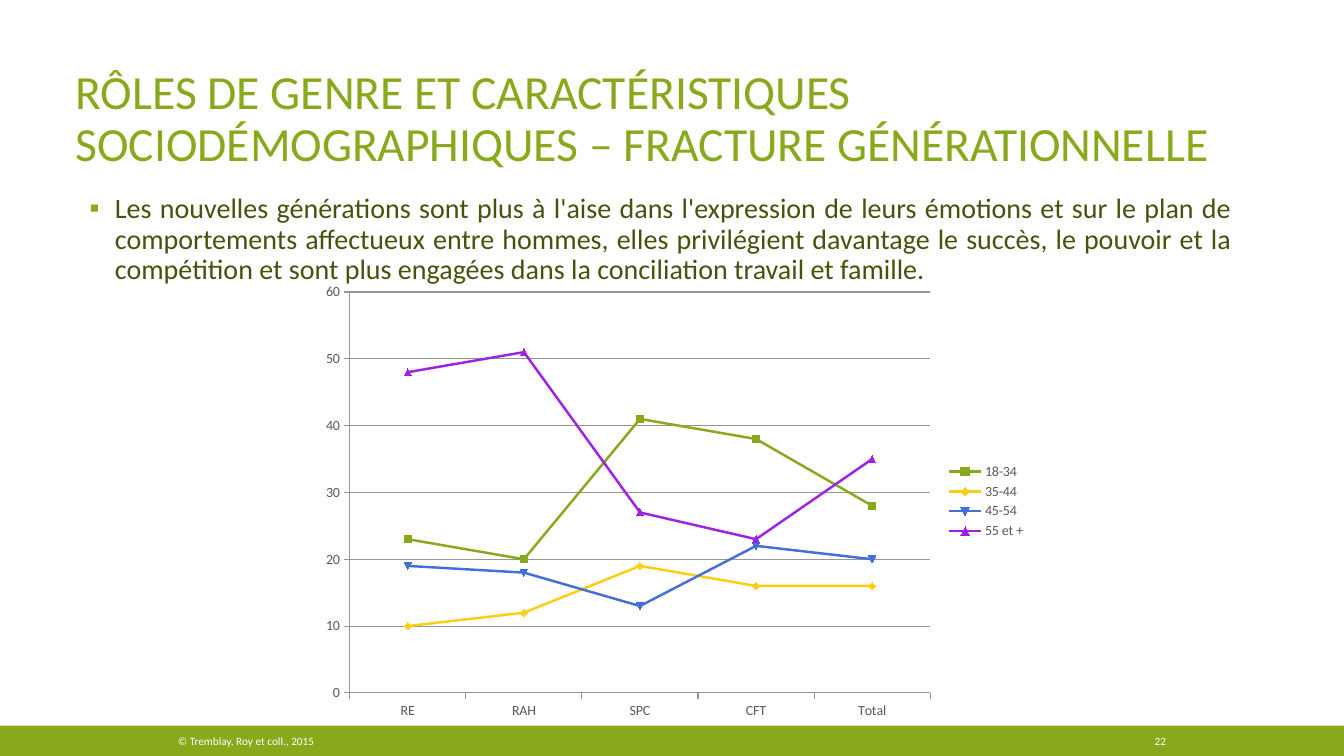
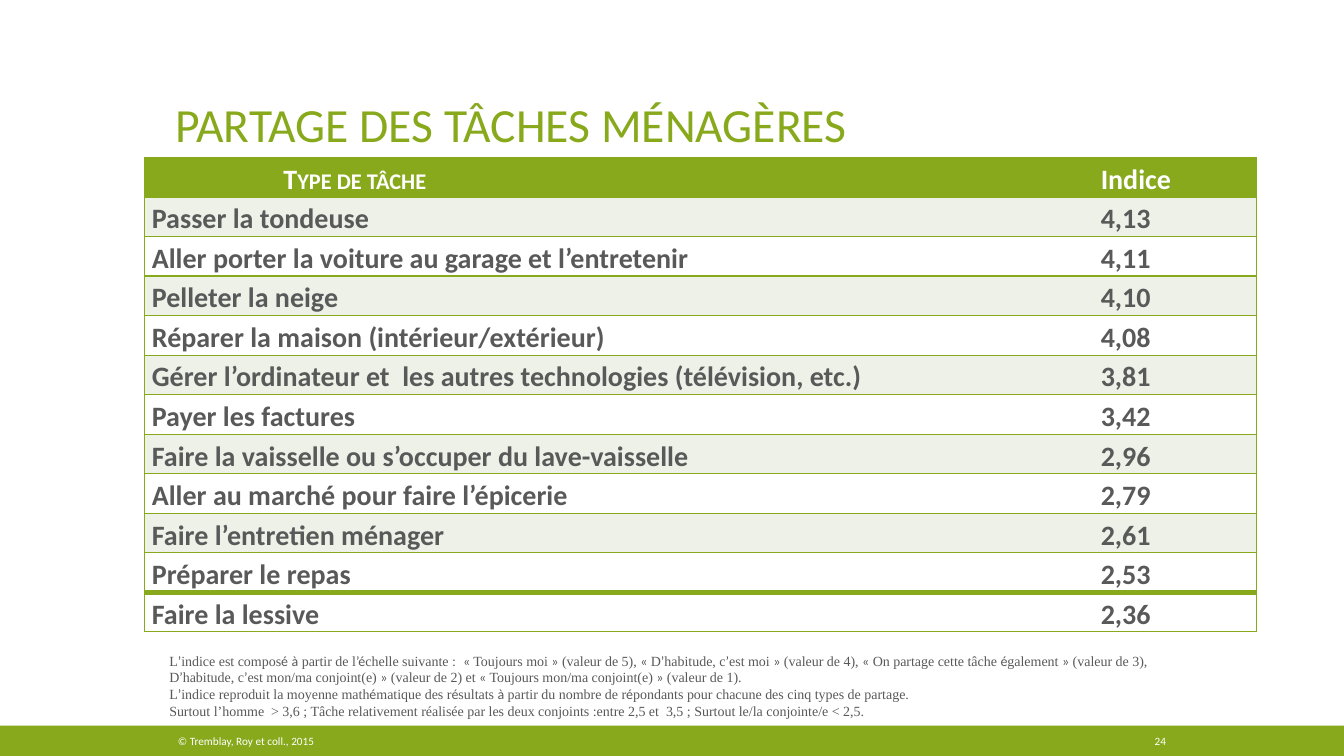
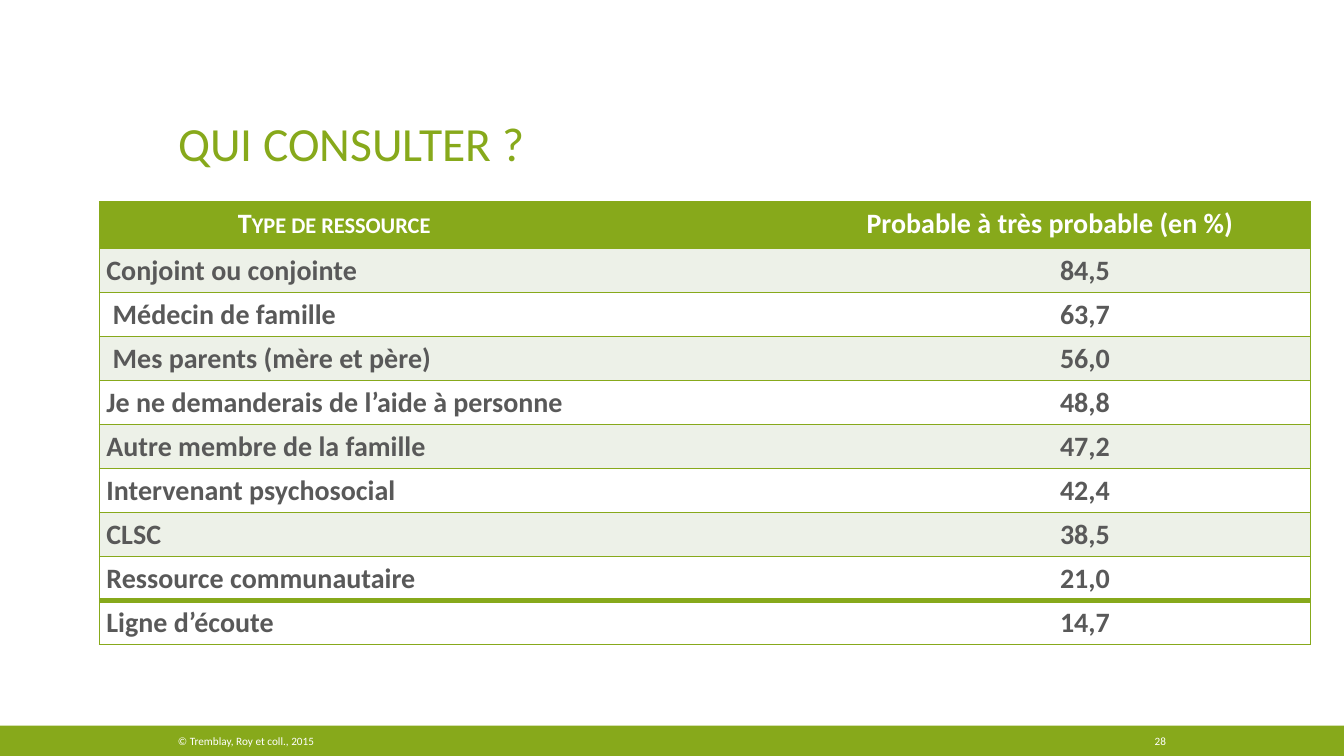
import itertools

import lxml.etree
import pptx
import pptx.chart.data
import pptx.dml.color
import pptx.enum.chart
import pptx.enum.shapes
import pptx.enum.text
import pptx.oxml.ns
import pptx.util

Pt = pptx.util.Pt
RGBColor = pptx.dml.color.RGBColor
ALIGN = pptx.enum.text.PP_ALIGN
ANCHOR = pptx.enum.text.MSO_ANCHOR
qn = pptx.oxml.ns.qn

GREEN = RGBColor(0x87, 0xA9, 0x1B)
DARK_GREEN = RGBColor(0x43, 0x54, 0x0D)
PALE_GREEN = RGBColor(0xED, 0xF1, 0xE8)
YELLOW = RGBColor(0xFB, 0xCE, 0x11)
BLUE = RGBColor(0x44, 0x6E, 0xD8)
PURPLE = RGBColor(0x9D, 0x22, 0xE2)
GREY = RGBColor(0x59, 0x59, 0x59)
GRID_GREY = RGBColor(0x96, 0x96, 0x96)
WHITE = RGBColor(0xFF, 0xFF, 0xFF)


def apply_formats(target, formats):
    for attribute, value in formats.items():
        setattr(target, attribute, value)


def write(paragraph, text, size, color, name="Calibri", bold=False, **paragraph_formats):
    apply_formats(paragraph, paragraph_formats)
    run = paragraph.add_run()
    run.text = text
    apply_formats(run.font, {"size": Pt(size), "name": name, "bold": bold})
    run.font.color.rgb = color
    return run


presentation = pptx.Presentation()
apply_formats(presentation, {"slide_width": Pt(960), "slide_height": Pt(540)})
CONTENT_LAYOUT = presentation.slide_layouts[1]
TITLE_LAYOUT = presentation.slide_layouts[5]

pages = [
    ("RÔLES DE GENRE ET CARACTÉRISTIQUES SOCIODÉMOGRAPHIQUES – FRACTURE GÉNÉRATIONNELLE",
     CONTENT_LAYOUT, 46.8, 36, 863.3, "22"),
    ("PARTAGE DES TÂCHES MÉNAGÈRES", TITLE_LAYOUT, 118, 23, 720, "24"),
    ("QUI CONSULTER ?", TITLE_LAYOUT, 120, 36, 720, "28"),
]
slides = []
for heading, layout, left, top, width, number in pages:
    slide = presentation.slides.add_slide(layout)
    slides.append(slide)
    title = slide.shapes.title
    apply_formats(title, {"left": Pt(left), "top": Pt(top), "width": Pt(width), "height": Pt(90)})
    apply_formats(title.text_frame, {
        "vertical_anchor": ANCHOR.BOTTOM,
        "word_wrap": True,
        "auto_size": pptx.enum.text.MSO_AUTO_SIZE.NONE,
    })
    write(title.text_frame.paragraphs[0], heading, 34, GREEN,
          alignment=ALIGN.LEFT, line_spacing=0.9)
    for text, text_left, text_width, alignment in [
        ("© Tremblay, Roy et coll., 2015", 120, 511, ALIGN.LEFT),
        (number, 779, 61, ALIGN.RIGHT),
    ]:
        footer = slide.shapes.add_textbox(Pt(text_left), Pt(520), Pt(text_width), Pt(18))
        apply_formats(footer.text_frame, {"vertical_anchor": ANCHOR.MIDDLE, "word_wrap": True})
        write(footer.text_frame.paragraphs[0], text, 8, WHITE, alignment=alignment)

generations, chores, resources = slides

band = generations.shapes.add_shape(
    pptx.enum.shapes.MSO_SHAPE.RECTANGLE, Pt(0), Pt(518.4), Pt(960), Pt(21.6))
band.shadow.inherit = False
band.fill.solid()
band.fill.fore_color.rgb = GREEN
band.line.fill.background()
presentation.slide_master.shapes.element.insert(2, band.element)

summary = generations.placeholders[1]
apply_formats(summary, {"left": Pt(53.3), "top": Pt(135.4), "width": Pt(833.8), "height": Pt(351.4)})
summary.text_frame.auto_size = pptx.enum.text.MSO_AUTO_SIZE.NONE
statement = summary.text_frame.paragraphs[0]
write(
    statement,
    "Les nouvelles générations sont plus à l'aise dans l'expression de leurs émotions et sur le plan "
    "de comportements affectueux entre hommes, elles privilégient davantage le succès, le pouvoir et "
    "la compétition et sont plus engagées dans la conciliation travail et famille.",
    20, DARK_GREEN, alignment=ALIGN.JUSTIFY, line_spacing=0.9, space_before=Pt(18))
bullet_format = statement._p.get_or_add_pPr()
bullet_format.set("marL", str(Pt(21.6)))
bullet_format.set("indent", str(Pt(-18)))
bullet_color = lxml.etree.SubElement(bullet_format, qn("a:buClr"))
lxml.etree.SubElement(bullet_color, qn("a:srgbClr"), val=str(GREEN))
lxml.etree.SubElement(bullet_format, qn("a:buFont"), typeface="Calibri")
lxml.etree.SubElement(bullet_format, qn("a:buChar"), char="▪")

age_groups = [
    ("18-34", (23, 20, 41, 38, 28), GREEN),
    ("35-44", (10, 12, 19, 16, 16), YELLOW),
    ("45-54", (19, 18, 13, 22, 20), BLUE),
    ("55 et +", (48, 51, 27, 23, 35), PURPLE),
]
scores = pptx.chart.data.CategoryChartData()
scores.categories = ["RE", "RAH", "SPC", "CFT", "Total"]
for age, values, color in age_groups:
    scores.add_series(age, values)
chart = generations.shapes.add_chart(
    pptx.enum.chart.XL_CHART_TYPE.LINE_MARKERS,
    Pt(222.5), Pt(196.5), Pt(517.7), Pt(323.3), scores).chart
apply_formats(chart, {"has_title": False, "has_legend": True})
apply_formats(chart.legend, {
    "position": pptx.enum.chart.XL_LEGEND_POSITION.RIGHT, "include_in_layout": False})
apply_formats(chart.font, {"size": Pt(10), "name": "Calibri"})
chart.font.color.rgb = GREY
apply_formats(chart.value_axis, {
    "minimum_scale": 0, "maximum_scale": 60, "major_unit": 10, "has_major_gridlines": True})
for axis in (chart.category_axis, chart.value_axis):
    axis.major_tick_mark = pptx.enum.chart.XL_TICK_MARK.OUTSIDE
for ruling in (chart.category_axis, chart.value_axis, chart.value_axis.major_gridlines):
    ruling.format.line.width = Pt(0.75)
    ruling.format.line.color.rgb = GRID_GREY
chart.plots[0].vary_by_categories = False
for series, (age, values, color) in zip(chart.plots[0].series, age_groups):
    series.smooth = False
    series.format.line.width = Pt(1.75)
    series.format.line.color.rgb = color
    series.marker.format.fill.solid()
    series.marker.format.fill.fore_color.rgb = color
    series.marker.format.line.color.rgb = color

chore_rows = [
    ("Type de tâche", "Indice"),
    ("Passer la tondeuse", "4,13"),
    ("Aller porter la voiture au garage et l’entretenir", "4,11"),
    ("Pelleter la neige", "4,10"),
    ("Réparer la maison (intérieur/extérieur)", "4,08"),
    ("Gérer l’ordinateur et  les autres technologies (télévision, etc.)", "3,81"),
    ("Payer les factures", "3,42"),
    ("Faire la vaisselle ou s’occuper du lave-vaisselle", "2,96"),
    ("Aller au marché pour faire l’épicerie", "2,79"),
    ("Faire l’entretien ménager", "2,61"),
    ("Préparer le repas", "2,53"),
    ("Faire la lessive", "2,36"),
]
resource_rows = [
    ("Type de ressource", "Probable à très probable (en %)"),
    ("Conjoint ou conjointe", "84,5"),
    (" Médecin de famille", "63,7"),
    (" Mes parents (mère et père)", "56,0"),
    ("Je ne demanderais de l’aide à personne", "48,8"),
    ("Autre membre de la famille", "47,2"),
    ("Intervenant psychosocial", "42,4"),
    ("CLSC", "38,5"),
    ("Ressource communautaire", "21,0"),
    ("Ligne d’écoute", "14,7"),
]
for slide, rows, left, top, widths, header_height, row_height, value_alignment in [
    (chores, chore_rows, 103.5, 112.5, (677.8, 116.2), 28.25, 28.25, ALIGN.LEFT),
    (resources, resource_rows, 71, 144, (543, 322), 33.8, 31.4, ALIGN.CENTER),
]:
    last = len(rows) - 1
    table = slide.shapes.add_table(
        len(rows), 2, Pt(left), Pt(top), Pt(sum(widths)),
        Pt(header_height + last * row_height)).table
    for column, width in zip(table.columns, widths):
        column.width = Pt(width)
    for row_index, row in enumerate(rows):
        is_header = row_index == 0
        table.rows[row_index].height = Pt(header_height if is_header else row_height)
        if is_header:
            fill = GREEN
        else:
            fill = PALE_GREEN if row_index % 2 and row_index != last else WHITE
        for column_index, text in enumerate(row):
            cell = table.cell(row_index, column_index)
            apply_formats(cell, {
                "margin_left": Pt(5), "margin_right": Pt(5),
                "margin_top": 0, "margin_bottom": 0})
            borders = {
                "a:lnL": 1 if column_index == 0 else 0,
                "a:lnR": 1 if column_index == 1 else 0,
                "a:lnT": 4 if row_index == last else 1,
                "a:lnB": 4 if row_index == last - 1 else 1,
            }
            for edge, weight in borders.items():
                border = lxml.etree.SubElement(
                    cell._tc.get_or_add_tcPr(), qn(edge), w=str(Pt(weight)))
                if weight:
                    border_fill = lxml.etree.SubElement(border, qn("a:solidFill"))
                    lxml.etree.SubElement(border_fill, qn("a:srgbClr"), val=str(GREEN))
                else:
                    lxml.etree.SubElement(border, qn("a:noFill"))
            cell.fill.solid()
            cell.fill.fore_color.rgb = fill
            paragraph = cell.text_frame.paragraphs[0]
            label = write(
                paragraph, text, 20, WHITE if is_header else GREY, bold=True, line_spacing=1.15,
                alignment=value_alignment if column_index and not is_header else ALIGN.LEFT)
            if is_header and column_index == 0:
                paragraph._p.get_or_add_pPr().set("marL", str(Pt(94)))
                label._r.get_or_add_rPr().set("cap", "small")

index_notes = [
    ("L’indice est composé à partir de l’échelle suivante :  « Toujours moi » (valeur de 5), "
     "« D’habitude, c’est moi » (valeur de 4), « On partage cette tâche également » (valeur de 3),",
     "’«»éà"),
    ("D’habitude, c’est mon/ma conjoint(e) » (valeur de 2) et "
     "« Toujours mon/ma conjoint(e) » (valeur de 1).", "’«»éà"),
    ("L’indice reproduit la moyenne mathématique des résultats à partir du nombre de répondants "
     "pour chacune des cinq types de partage.", "’«»éà"),
    ("Surtout l’homme  > 3,6 ; Tâche relativement réalisée par les deux conjoints :entre 2,5 et  3,5 ; "
     "Surtout le/la conjointe/e < 2,5.", ""),
]
legend_note = chores.shapes.add_textbox(Pt(113.8), Pt(462.2), Pt(728.6), Pt(55.4)).text_frame
apply_formats(legend_note, {"word_wrap": True, "vertical_anchor": ANCHOR.MIDDLE})
for note_index, (note, calibri_characters) in enumerate(index_notes):
    paragraph = legend_note.add_paragraph() if note_index else legend_note.paragraphs[0]
    for is_calibri, characters in itertools.groupby(note, lambda c: c in calibri_characters):
        write(paragraph, "".join(characters), 10, GREY,
              name="Calibri" if is_calibri else "Times New Roman")

presentation.save("out.pptx")
